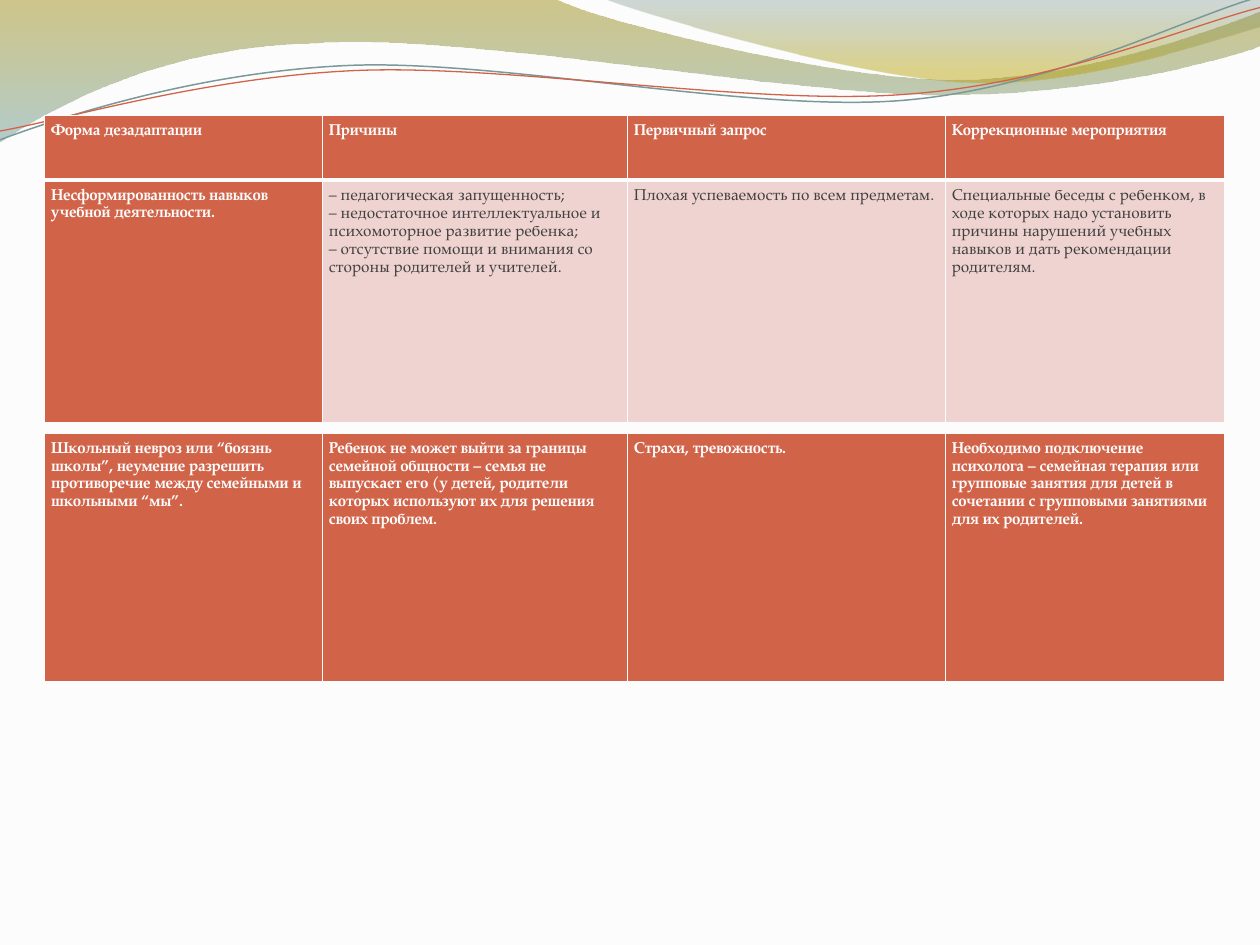
from lxml import etree
from pptx import Presentation
from pptx.dml.color import RGBColor
from pptx.oxml.ns import qn
from pptx.util import Pt

FONT = "TeX Gyre Pagella"
PAPER, RUST, ROSE, INK = "FCFCFC", "D16349", "EED3D0", "424040"
INCH = 72

WAVES = [
    dict(start=(0, 0), parts=[
        [(4.4, -0.01)],
        [(4.76, 0.17), (6.64, 0.63), (7.58, 0.63)],
        [(8.53, 0.63), (9.58, 0.26), (10, 0.09)],
        [(10.01, 0.36)],
        [(9.83, 0.44), (8.7, 0.76), (7.46, 0.75)],
        [(6.22, 0.75), (3.82, 0.28), (2.57, 0.34)],
        [(1.29, 0.36), (0.46, 0.83), (-0.01, 1.13)],
        [(0, 0)]],
        stops=[(0, "978500", 45), (1, "77A5A6", 55)]),
    dict(start=(4.79, -0.01), parts=[
        [(5.09, 0.11), (6.82, 0.62), (7.69, 0.65)],
        [(8.56, 0.69), (9.61, 0.32), (10, 0.21)],
        [(10, 0)],
        [(4.79, -0.01)]],
        stops=[(0, "648484", 30), (0.8, "B49F00", 45)]),
    dict(start=(0, 1.11), parts=[
        [(0.48, 0.93), (1.58, 0.57), (2.77, 0.52)],
        [(3.95, 0.47), (5.93, 0.89), (7.13, 0.8)],
        [(8.33, 0.71), (9.38, 0.15), (9.98, -0.02)]],
        line=("7C999A", 0.85)),
    dict(start=(0, 1.04), parts=[
        [(0.47, 0.96), (1.64, 0.61), (2.83, 0.56)],
        [(4.03, 0.51), (5.97, 0.84), (7.17, 0.75)],
        [(8.36, 0.67), (9.41, 0.21), (10, 0.06)]],
        line=(RUST, 0.75)),
]

TABLE_LEFT = 25.5
COLUMN_WIDTHS = [158.7, 174.3, 181.7, 159.6]
HEADING = dict(fills=[RUST] * 4, bottom=3)
BODY = dict(fills=[RUST] + [ROSE] * 3, bottom=1)
TABLES = [
    dict(top=66, rows=[
        (36.9, HEADING, [
            "Форма дезадаптации",
            "Причины",
            "Первичный запрос",
            "Коррекционные мероприятия"]),
        (138.8, BODY, [
            "Несформированность навыков учебной деятельности.",
            "– педагогическая запущенность;\n"
            "– недостаточное интеллектуальное и психомоторное развитие ребенка;\n"
            "– отсутствие помощи и внимания со стороны родителей и учителей.",
            "Плохая успеваемость по всем предметам.",
            "Специальные беседы с ребенком, в ходе которых надо установить "
            "причины нарушений учебных навыков и дать рекомендации родителям."]),
    ]),
    dict(top=247.7, rows=[
        (143, HEADING, [
            "Школьный невроз или “боязнь школы”, неумение разрешить "
            "противоречие между семейными и школьными “мы”.",
            "Ребенок не может выйти за границы семейной общности – семья не "
            "выпускает его (у детей, родители которых используют их для решения "
            "своих проблем.",
            "Страхи, тревожность.",
            "Необходимо подключение психолога – семейная терапия или групповые "
            "занятия для детей в сочетании с групповыми занятиями для их родителей."]),
    ]),
]


def color(value):
    return RGBColor.from_string(value)


def bend(shape, parts):
    segments = list(shape.element.spPr.iter(qn("a:lnTo")))
    for part in parts:
        group, segments = segments[:len(part)], segments[len(part):]
        if len(part) == 3:
            curve = etree.Element(qn("a:cubicBezTo"))
            group[0].addprevious(curve)
            for segment in group:
                curve.append(segment[0])
                segment.getparent().remove(segment)


def add_wave(slide, start, parts, stops=None, line=None):
    points = [(Pt(x * INCH), Pt(y * INCH)) for part in [[start], *parts] for x, y in part]
    builder = slide.shapes.build_freeform(*points[0])
    builder.add_line_segments(points[1:], close=stops is not None)
    shape = builder.convert_to_shape()
    bend(shape, parts)
    shape.shadow.inherit = False
    if line:
        shape.fill.background()
        shape.line.color.rgb = color(line[0])
        shape.line.width = Pt(line[1])
        return
    shape.line.fill.background()
    shape.fill.gradient()
    shape.fill.gradient_angle = 270
    for stop, (position, value, opacity) in zip(shape.fill.gradient_stops, stops):
        stop.position = position
        stop.color.rgb = color(value)
    tints = shape.element.spPr.iter(qn("a:srgbClr"))
    for tint, (position, value, opacity) in zip(tints, stops):
        etree.SubElement(tint, qn("a:alpha"), val=str(opacity * 1000))


def set_borders(cell, bottom):
    properties = cell._tc.get_or_add_tcPr()
    for index, (tag, width) in enumerate(
            [("a:lnL", 1), ("a:lnR", 1), ("a:lnT", 1), ("a:lnB", bottom)]):
        border = etree.Element(qn(tag), w=str(Pt(width)))
        fill = etree.SubElement(border, qn("a:solidFill"))
        etree.SubElement(fill, qn("a:srgbClr"), val=PAPER)
        properties.insert(index, border)


def fill_cell(cell, text, fill, bottom):
    cell.fill.solid()
    cell.fill.fore_color.rgb = color(fill)
    cell.margin_left = cell.margin_right = Pt(3.75)
    cell.margin_top = cell.margin_bottom = Pt(3.75)
    set_borders(cell, bottom)
    paragraph = cell.text_frame.paragraphs[0]
    paragraph.text = text
    paragraph.line_spacing = 1.15
    paragraph.space_before = Pt(7.5)
    paragraph.space_after = Pt(9)
    font = paragraph.font
    font.name = FONT
    font.size = Pt(9)
    font.bold = fill == RUST
    font.color.rgb = color(PAPER if fill == RUST else INK)


def add_table(slide, top, rows):
    height = sum(row[0] for row in rows)
    table = slide.shapes.add_table(
        len(rows), len(COLUMN_WIDTHS), Pt(TABLE_LEFT), Pt(top),
        Pt(sum(COLUMN_WIDTHS)), Pt(height)).table
    table.first_row = table.horz_banding = False
    for column, width in zip(table.columns, COLUMN_WIDTHS):
        column.width = Pt(width)
    for row, (row_height, style, texts) in zip(table.rows, rows):
        row.height = Pt(row_height)
        for cell, text, fill in zip(row.cells, texts, style["fills"]):
            fill_cell(cell, text, fill, style["bottom"])


def main():
    presentation = Presentation()
    presentation.slide_width, presentation.slide_height = Pt(720), Pt(540)
    slide = presentation.slides.add_slide(presentation.slide_layouts[6])
    slide.background.fill.solid()
    slide.background.fill.fore_color.rgb = color(PAPER)
    for wave in WAVES:
        add_wave(slide, **wave)
    for table in TABLES:
        add_table(slide, **table)
    presentation.save("out.pptx")


if __name__ == "__main__":
    main()
